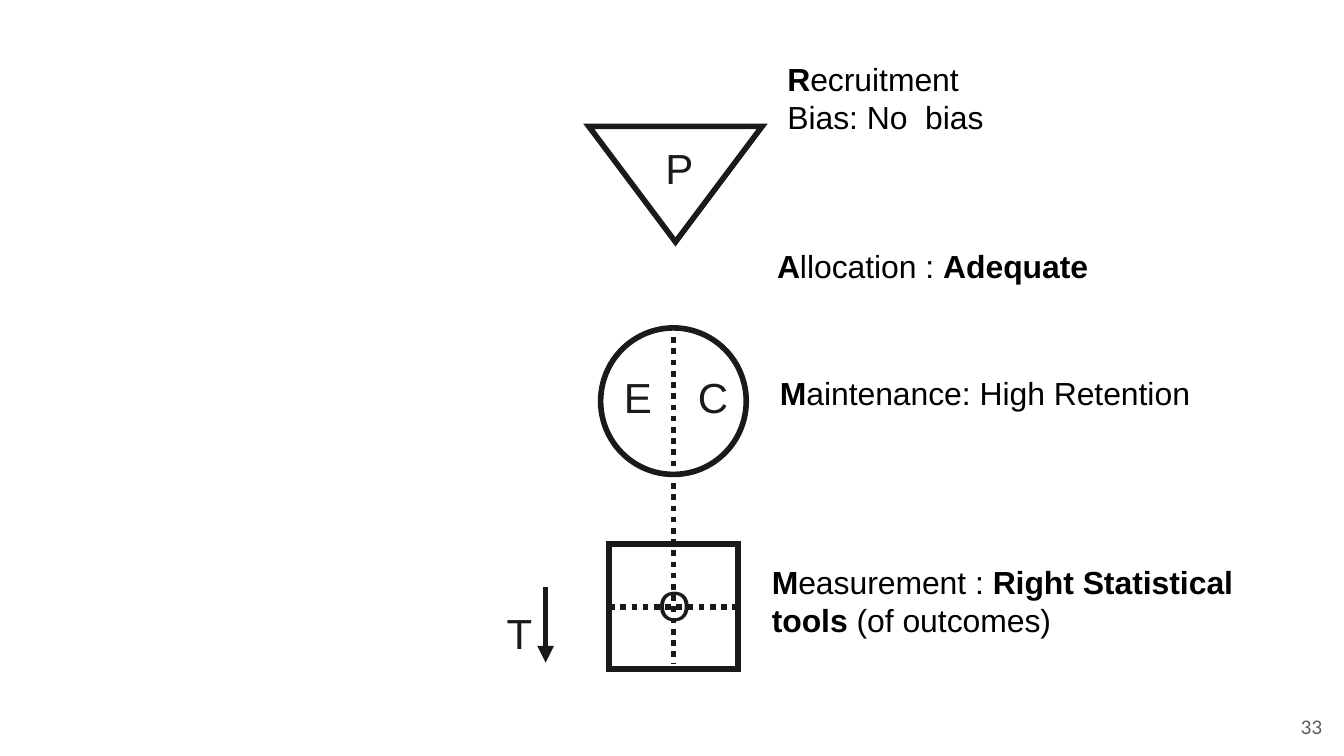
from lxml.etree import SubElement
from pptx import Presentation
from pptx.dml.color import RGBColor
from pptx.enum.dml import MSO_LINE
from pptx.enum.shapes import MSO_CONNECTOR, MSO_SHAPE
from pptx.enum.text import MSO_ANCHOR, PP_ALIGN
from pptx.oxml.ns import qn
from pptx.util import Pt

INK = RGBColor(0x1A, 0x1A, 0x1A)
BLACK = RGBColor(0, 0, 0)
GRAY = RGBColor(0x59, 0x59, 0x59)


def add_text(slide, box, paras, size, color, font="Arial", wrap=True, pad=(5, 3)):
    """Add a text box from paragraphs of (words, bold) runs."""
    frame = slide.shapes.add_textbox(*map(Pt, box)).text_frame
    frame.word_wrap = wrap
    frame.margin_left = frame.margin_right = Pt(pad[0])
    frame.margin_top = frame.margin_bottom = Pt(pad[1])
    for i, runs in enumerate(paras):
        para = frame.add_paragraph() if i else frame.paragraphs[0]
        for words, bold in runs:
            run = para.add_run()
            run.text = words
            run.font.name, run.font.size = font, Pt(size)
            run.font.bold = bold
            run.font.color.rgb = color
    return frame


def add_form(slide, kind, box):
    """Add an unfilled outline shape with sharp corners."""
    form = slide.shapes.add_shape(kind, *map(Pt, box))
    form.shadow.inherit = False
    form.fill.background()
    form.line.color.rgb = INK
    form.line.width = Pt(3)
    SubElement(form.line._get_or_add_ln(), qn("a:miter"), lim="800000")
    return form


def add_line(slide, start, end):
    """Add a thick straight line without a shadow."""
    line = slide.shapes.add_connector(
        MSO_CONNECTOR.STRAIGHT, *map(Pt, (*start, *end)))
    line.line.color.rgb = INK
    line.line.width = Pt(3)
    SubElement(line._element.spPr, qn("a:effectLst"))
    return line


def draw_frame(slide, left, top):
    """Draw the triangle, circle, square and time arrow of the study."""
    mid = left + 94.8
    add_form(slide, MSO_SHAPE.OVAL, (mid - 39, top + 107.7, 78, 78.5))
    square = add_form(slide, MSO_SHAPE.RECTANGLE, (mid - 34.5, top + 223.6, 69, 67))
    split = add_line(slide, (mid, top + 112.7), (mid, top + 287.7))
    cone = add_form(slide, MSO_SHAPE.ISOSCELES_TRIANGLE,
                    (mid - 45.4, top - 0.3, 92.9, 61.9))
    cone.rotation = 180
    cross = add_line(slide, (mid - 34.5, top + 257), (mid + 34.5, top + 257))
    cross.begin_connect(square, 1)
    cross.end_connect(square, 3)
    for dots in (split, cross):
        dots.line.dash_style = MSO_LINE.ROUND_DOT
    time = add_line(slide, (left + 26.3, top + 246.6), (left + 26.3, top + 287))
    SubElement(time.line._get_or_add_ln(), qn("a:tailEnd"), type="triangle")
    for mark, x, y in (("P", 85.4, 5.4), ("E", 63.2, 128.2), ("C", 102.9, 128.2),
                       ("O", 81.6, 239.2), ("T", 0.4, 254.6)):
        add_text(slide, (left + x, top + y, 26, 32.4), [[(mark, False)]],
                 22.5, INK, wrap=False)


def draw_notes(slide, left, top):
    """Write the four bias notes beside the diagram."""
    notes = (
        (8.8, 0, 186.5, [[("R", True), ("ecruitment", False)],
                         [("Bias: No  bias", False)]]),
        (3.3, 100, 196.6, [[("A", True), ("llocation : ", False),
                            ("Adequate", True)]]),
        (4.8, 168.5, 232.6, [[("M", True), ("aintenance: High Retention", False)]]),
        (0.5, 269.3, 270.7, [[("M", True), ("easurement : ", False),
                              ("Right Statistical tools ", True),
                              ("(of outcomes)", False)]]),
    )
    for x, y, width, paras in notes:
        add_text(slide, (left + x, top + y, width, 46.8), paras, 17.1, BLACK)


def draw_number(slide, box):
    """Write the page number at the right of its box."""
    frame = add_text(slide, box, [[("33", False)]], 10, GRAY, "Lato", pad=(7.2, 7.2))
    frame.vertical_anchor = MSO_ANCHOR.MIDDLE
    frame.paragraphs[0].alignment = PP_ALIGN.RIGHT


def main():
    """Build and save the slide."""
    deck = Presentation()
    deck.slide_width, deck.slide_height = Pt(720), Pt(405)
    slide = deck.slides.add_slide(deck.slide_layouts[6])
    draw_frame(slide, 266, 68)
    draw_notes(slide, 408, 28.9)
    draw_number(slide, (672.3, 373.9, 43.2, 31))
    deck.save("out.pptx")


if __name__ == "__main__":
    main()
